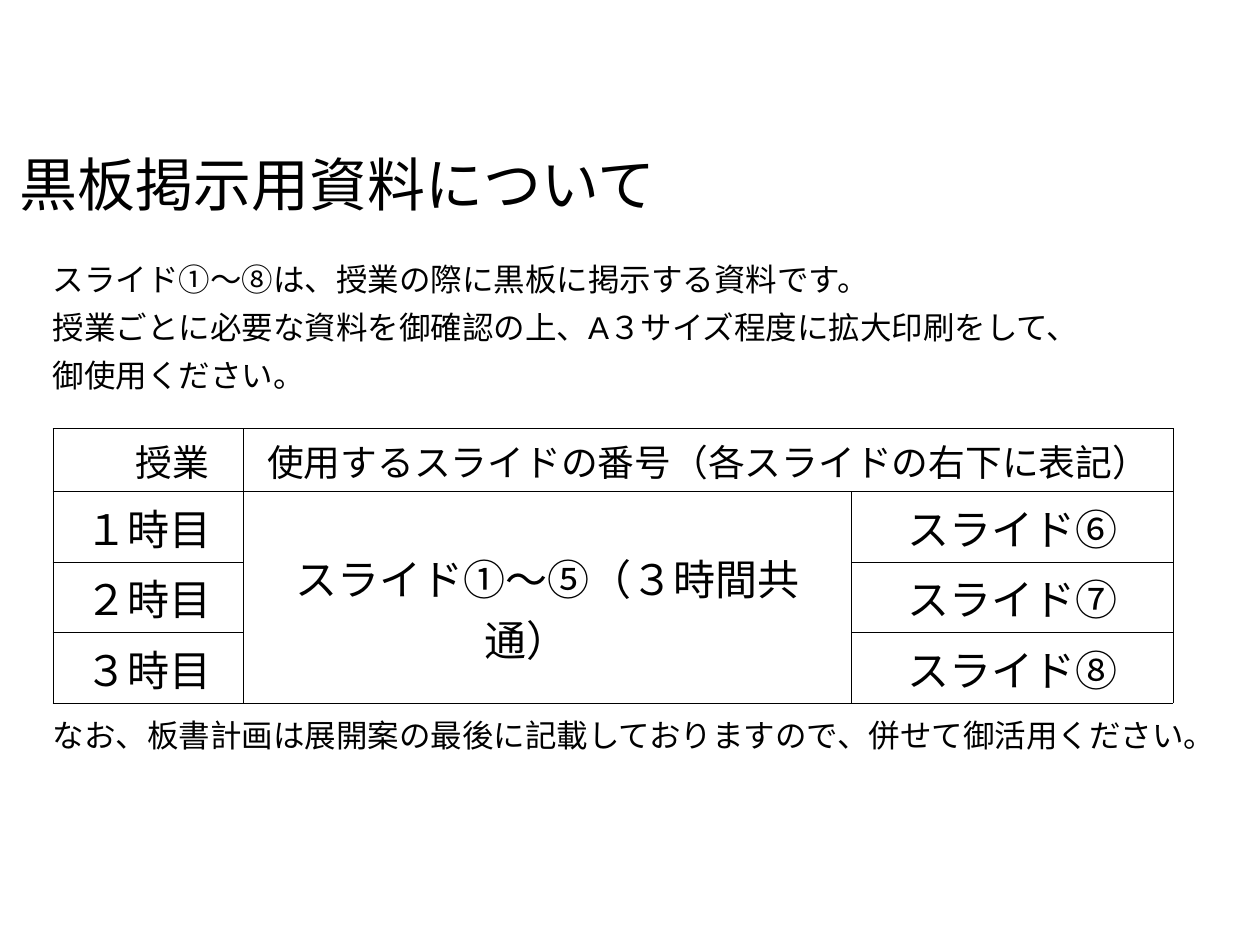
from lxml import etree
from pptx import Presentation
from pptx.dml.color import RGBColor
from pptx.enum.text import MSO_ANCHOR as Anchor, PP_ALIGN as Align
from pptx.oxml.ns import qn
from pptx.util import Inches, Pt

COLORS = {"text": "000000", "line": "000000", "cell": "FFFFFF"}


def write(paragraph, text, size=18, font="Calibri", align=Align.LEFT, spacing=None, before=0):
    """Append a run to the paragraph and set the paragraph's layout."""
    paragraph.alignment = align
    paragraph.space_before = Pt(before)
    if spacing:
        paragraph.line_spacing = spacing
    run = paragraph.add_run()
    run.text = text
    run.font.size = Pt(size)
    run.font.name = font
    run.font.color.rgb = RGBColor.from_string(COLORS["text"])


def set_borders(cell, width):
    """Draw a solid line on all four sides; lines come before the fill in tcPr."""
    properties = cell._tc.get_or_add_tcPr()
    for index, side in enumerate(("lnL", "lnR", "lnT", "lnB")):
        line = etree.Element(qn(f"a:{side}"), w=str(Pt(width)))
        fill = etree.SubElement(line, qn("a:solidFill"))
        etree.SubElement(fill, qn("a:srgbClr"), val=COLORS["line"])
        properties.insert(index, line)


presentation = Presentation()
presentation.slide_width = Inches(10)
presentation.slide_height = Inches(7.5)
slide = presentation.slides.add_slide(presentation.slide_layouts[5])

# Title
title = slide.shapes.title
title.left, title.top = Inches(0), Inches(1.06)
title.width, title.height = Inches(5.36), Inches(0.73)
title.text_frame.vertical_anchor = Anchor.BOTTOM
title.text_frame.margin_bottom = Inches(0.05)
write(title.text_frame.paragraphs[0], "黒板掲示用資料について", size=33.1,
      align=Align.CENTER, spacing=0.9)

# Explanation above the table and closing note below it
body = slide.shapes.add_textbox(Inches(0.32), Inches(2.06), Inches(9.86), Inches(4.39))
body.text_frame.word_wrap = True
body.text_frame.margin_top = Inches(0.04)
body_lines = [
    (0, [("スライド①～⑧は、授業の際に黒板に掲示する資料です。", "Calibri")]),
    (8, [("授業ごとに必要な資料を御確認の上、", "Calibri"), ("A", "Arial"),
         ("３サイズ程度に拡大印刷をして、", "Calibri")]),
    (8, [("御使用ください。", "Calibri")]),
    (186, [("なお、板書計画は展開案の最後に記載しておりますので、併せて御活用ください。", "Calibri")]),
]
for number, (before, runs) in enumerate(body_lines):
    paragraph = body.text_frame.add_paragraph() if number else body.text_frame.paragraphs[0]
    for text, font in runs:
        write(paragraph, text, font=font, spacing=0.9, before=before)

# Table of lessons and slide numbers
column_widths = [1.51, 4.83, 2.55]
row_heights = [0.5, 0.56, 0.56, 0.56]
rows = [
    ["授業", "使用するスライドの番号（各スライドの右下に表記）", ""],
    ["１時目", "スライド①～⑤（３時間共通）　", "スライド⑥"],
    ["２時目", "", "スライド⑦"],
    ["３時目", "", "スライド⑧"],
]
table = slide.shapes.add_table(len(rows), len(column_widths), Inches(0.42), Inches(3.4),
                               Inches(sum(column_widths)), Inches(sum(row_heights))).table
table.first_row = table.horz_banding = False
for column, width in zip(table.columns, column_widths):
    column.width = Inches(width)
for row, height in zip(table.rows, row_heights):
    row.height = Inches(height)

for row_number, texts in enumerate(rows):
    for column_number, text in enumerate(texts):
        cell = table.cell(row_number, column_number)
        cell.margin_left = cell.margin_right = Inches(0.07)
        cell.margin_top = cell.margin_bottom = Inches(0.04)
        cell.fill.solid()
        cell.fill.fore_color.rgb = RGBColor.from_string(COLORS["cell"])
        set_borders(cell, 0.5)
        if text:
            write(cell.text_frame.paragraphs[0], text, size=24 if row_number else 21,
                  align=Align.CENTER)

# The lesson heading lines up with the right end of the lessons below it
lesson_heading = table.cell(0, 0)
lesson_heading.text_frame.paragraphs[0].alignment = Align.RIGHT
lesson_heading.margin_right = Inches(0.27)

# Merged cells: the number heading and the slides shared by all lessons
table.cell(0, 1).merge(table.cell(0, 2))
shared_slides = table.cell(1, 1)
shared_slides.merge(table.cell(3, 1))
shared_slides.vertical_anchor = Anchor.MIDDLE
shared_slides.margin_top = Inches(0.2)

presentation.save("out.pptx")
